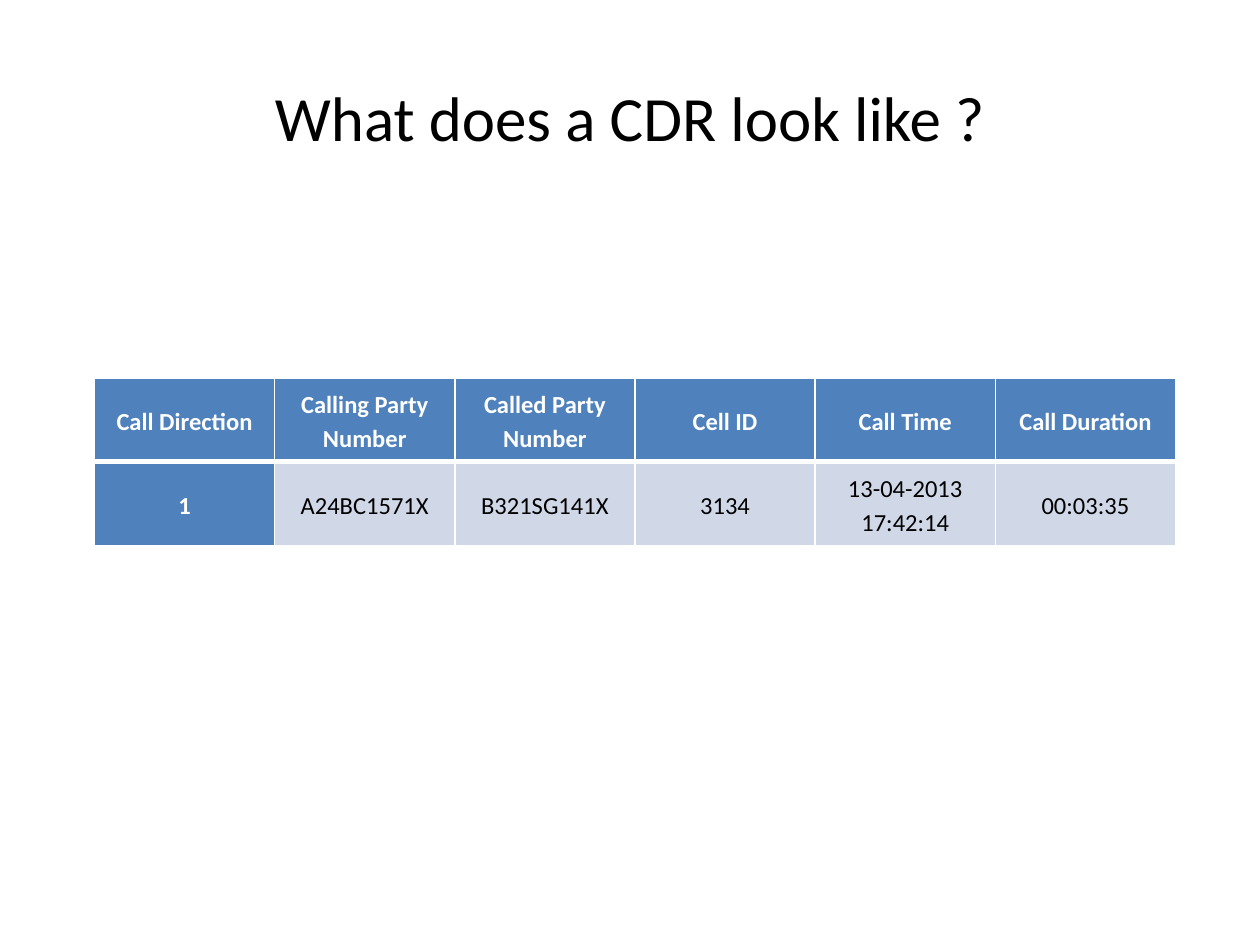
import pptx
import pptx.util
import pptx.dml.color
import pptx.enum.text
import pptx.oxml
import pptx.oxml.ns

Inches, Pt = pptx.util.Inches, pptx.util.Pt
RGBColor = pptx.dml.color.RGBColor
CENTER = pptx.enum.text.PP_ALIGN.CENTER
MIDDLE = pptx.enum.text.MSO_ANCHOR.MIDDLE

WHITE = RGBColor(0xFF, 0xFF, 0xFF)
BLACK = RGBColor(0, 0, 0)
BLUE = RGBColor(0x4F, 0x81, 0xBD)
PALE = RGBColor(0xD0, 0xD8, 0xE8)

RECORDS = [
    ["Call Direction", "Calling Party Number", "Called Party Number",
     "Cell ID", "Call Time", "Call Duration"],
    ["1", "A24BC1571X", "B321SG141X", "3134", "13-04-2013\v17:42:14", "00:03:35"],
]


def set_attrs(obj, values):
    """Set each named attribute of an object."""
    for name, value in values.items():
        setattr(obj, name, value)


def write(p, text, size, color, bold=False, **spacing):
    """Put centred, formatted text in a paragraph."""
    p.text = text
    set_attrs(p, {"alignment": CENTER, **spacing})
    for r in p.runs:
        set_attrs(r.font, {"name": "Calibri", "size": Pt(size), "bold": bold})
        r.font.color.rgb = color


def add_border(cell, side, width):
    """Draw one white side of a cell before its fill is set."""
    ln = pptx.oxml.parse_xml(
        f'<a:{side} {pptx.oxml.ns.nsdecls("a")} w="{Pt(width)}">'
        f'<a:solidFill><a:srgbClr val="{WHITE}"/></a:solidFill></a:{side}>')
    cell._tc.get_or_add_tcPr().append(ln)


def add_title(slide, left, top, width, height):
    """Add the slide heading in the given box."""
    tf = slide.shapes.add_textbox(left, top, width, height).text_frame
    inset = Inches(0.1)
    set_attrs(tf, {"word_wrap": True, "vertical_anchor": MIDDLE,
                   "margin_left": inset, "margin_right": inset,
                   "margin_top": inset, "margin_bottom": inset})
    write(tf.paragraphs[0], "What does a CDR look like ?", 36, BLACK)


def add_record_table(slide, left, top, width, height):
    """Add the call record table in the given box."""
    rows, cols = len(RECORDS), len(RECORDS[0])
    table = slide.shapes.add_table(rows, cols, left, top, width, height).table
    set_attrs(table, {"first_row": True, "first_col": True, "horz_banding": False})
    for i, record in enumerate(RECORDS):
        for j, text in enumerate(record):
            cell = table.cell(i, j)
            heading = i == 0 or j == 0
            set_attrs(cell, {"margin_left": Inches(0.07), "margin_right": Inches(0.07),
                             "margin_top": 0, "margin_bottom": 0,
                             "vertical_anchor": MIDDLE})
            widths = {"lnL": 1, "lnR": 1, "lnT": 3 if i else 1, "lnB": 1 if i else 3}
            for side, line_width in widths.items():
                add_border(cell, side, line_width)
            cell.fill.solid()
            cell.fill.fore_color.rgb = BLUE if heading else PALE
            write(cell.text_frame.paragraphs[0], text, 14,
                  WHITE if heading else BLACK, heading,
                  line_spacing=1.15, space_after=Pt(2 if "\v" in text else 6))


def main():
    """Build and save the slide."""
    prs = pptx.Presentation()
    set_attrs(prs, {"slide_width": Inches(10), "slide_height": Inches(7.5)})
    slide = prs.slides.add_slide(prs.slide_layouts[6])
    add_title(slide, Inches(0.5), Inches(0.3), Inches(9), Inches(1.25))
    add_record_table(slide, Inches(0.75), Inches(3), Inches(8.58), Inches(1.33))
    prs.save("out.pptx")


if __name__ == "__main__":
    main()
